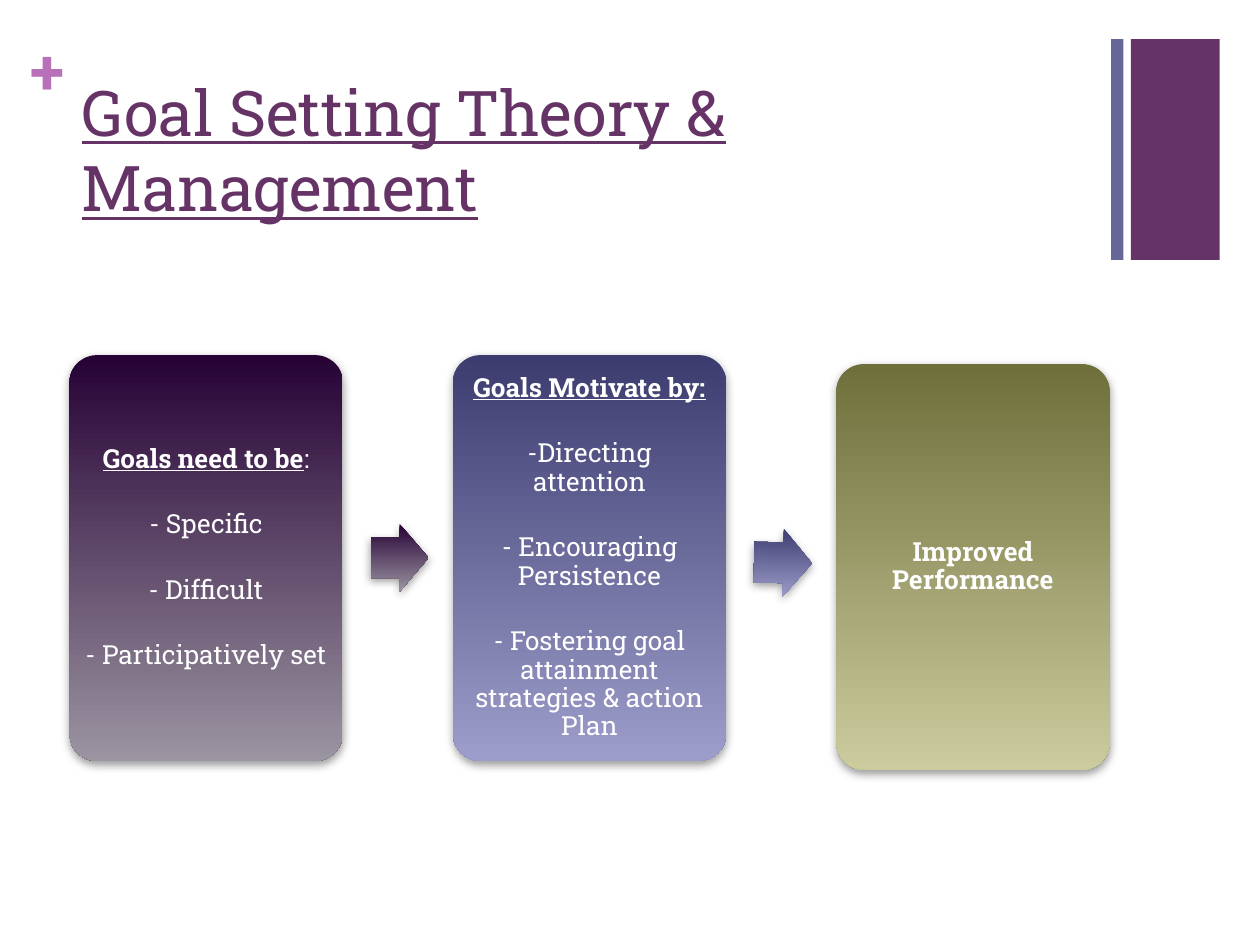
import pptx
import pptx.util
import pptx.dml.color
import pptx.enum.shapes
import pptx.enum.text
import lxml.etree

Cm, Pt = pptx.util.Cm, pptx.util.Pt
SHAPE = pptx.enum.shapes.MSO_SHAPE
ALIGN = pptx.enum.text.PP_ALIGN
ANCHOR = pptx.enum.text.MSO_ANCHOR
FONT = "Roboto Slab"
A = "http://schemas.openxmlformats.org/drawingml/2006/main"

CARD_W, CARD_H = 5.51, 8.18
ARROW_W, ARROW_H = 1.17, 1.37
PARAGRAPH_GAP = 21.3

HEADING = {"bold": True, "underline": True}
PLAIN = {"bold": False, "underline": False}
STRONG = {"bold": True}


def rgb(value):
    return pptx.dml.color.RGBColor.from_string(value)


def add_run(p, text, size, color, formats):
    r = p.add_run()
    r.text = text
    r.font.color.rgb = rgb(color)
    for name, value in {"name": FONT, "size": Pt(size), **formats}.items():
        setattr(r.font, name, value)


def set_frame(tf, anchor, inset_x, inset_y):
    formats = {
        "word_wrap": True,
        "vertical_anchor": anchor,
        "margin_left": Cm(inset_x),
        "margin_right": Cm(inset_x),
        "margin_top": Cm(inset_y),
        "margin_bottom": Cm(inset_y),
    }
    for name, value in formats.items():
        setattr(tf, name, value)


def add_label(s, box, text, color, formats, inset_x=0, inset_y=0):
    tf = s.shapes.add_textbox(*map(Cm, box)).text_frame
    set_frame(tf, ANCHOR.TOP, inset_x, inset_y)
    add_run(tf.paragraphs[0], text, 36, color, formats)


def add_block(s, kind, box):
    sp = s.shapes.add_shape(kind, *map(Cm, box))
    sp.shadow.inherit = False
    sp.line.fill.background()
    return sp


def add_gradient_block(s, kind, box, colors):
    sp = add_block(s, kind, box)
    sp.fill.gradient()
    sp.fill.gradient_angle = 270
    for stop, color, position in zip(sp.fill.gradient_stops, colors, (0, 1)):
        stop.color.rgb = rgb(color)
        stop.position = position
    effects = sp._element.spPr.find(f"{{{A}}}effectLst")
    shadow = lxml.etree.SubElement(
        effects, f"{{{A}}}outerShdw", blurRad=str(Pt(5)), dist=str(Pt(2)),
        dir="5400000", algn="ctr", rotWithShape="0")
    tone = lxml.etree.SubElement(shadow, f"{{{A}}}srgbClr", val="808080")
    lxml.etree.SubElement(tone, f"{{{A}}}alpha", val="75000")
    return sp


def add_header(s, left, top):
    add_label(s, (left, top, 0.74, 1.55), "+", "B870B8", STRONG)
    add_label(s, (left + 0.79, top + 0.71, 20.98, 3.1),
              "Goal Setting Theory & Management", "663366",
              {"underline": True}, 0.25, 0.13)


def add_corner_bars(s, left, top, height):
    for offset, width, color in ((0, 0.25, "666699"), (0.4, 1.79, "663366")):
        sp = add_block(s, SHAPE.RECTANGLE, (left + offset, top, width, height))
        sp.fill.solid()
        sp.fill.fore_color.rgb = rgb(color)


def add_card(s, left, top, colors, paragraphs):
    sp = add_gradient_block(s, SHAPE.ROUNDED_RECTANGLE,
                            (left, top, CARD_W, CARD_H), colors)
    sp.adjustments[0] = 0.1
    tf = sp.text_frame
    set_frame(tf, ANCHOR.MIDDLE, 0.15, 0.15)
    for i, runs in enumerate(paragraphs):
        p = tf.add_paragraph() if i else tf.paragraphs[0]
        formats = {"alignment": ALIGN.CENTER, "line_spacing": 0.9,
                   "space_before": Pt(PARAGRAPH_GAP if i else 0)}
        for name, value in formats.items():
            setattr(p, name, value)
        for text, font_formats in runs:
            add_run(p, text, 15, "FFFFFF", font_formats)


def add_arrow(s, left, top, colors, rotation):
    sp = add_gradient_block(s, SHAPE.RIGHT_ARROW,
                            (left, top, ARROW_W, ARROW_H), colors)
    sp.adjustments[0] = 0.6
    sp.adjustments[1] = 0.5
    sp.rotation = rotation


def add_process(s, left, top):
    plum, indigo, olive = (("260235", "9B94A1"), ("3C3C6F", "9D9DCB"),
                           ("6F6F3C", "CBCB9D"))
    cards = (
        (0, plum, [
            [("Goals need to be", HEADING), (":", PLAIN)],
            [("- Specific", PLAIN)],
            [("- Difficult", PLAIN)],
            [("- Participatively set", PLAIN)],
        ]),
        (0, indigo, [
            [("Goals Motivate by:", HEADING)],
            [("-Directing attention", PLAIN)],
            [("- Encouraging Persistence", PLAIN)],
            [("- Fostering goal attainment strategies & action Plan", PLAIN)],
        ]),
        (0.18, olive, [[("Improved Performance", STRONG)]]),
    )
    pitch = 7.73
    for i, (drop, colors, paragraphs) in enumerate(cards):
        add_card(s, left + i * pitch, top + drop, colors, paragraphs)
    for i, (drop, colors, rotation) in enumerate(((3.4, plum, 0),
                                                  (3.5, indigo, 1.3))):
        add_arrow(s, left + i * pitch + 6.07, top + drop, colors, rotation)


def main():
    prs = pptx.Presentation()
    prs.slide_width, prs.slide_height = Cm(25.4), Cm(19.05)
    s = prs.slides.add_slide(prs.slide_layouts[6])
    add_corner_bars(s, 22.4, 0.79, 4.45)
    add_header(s, 0.61, 0.64)
    add_process(s, 1.4, 7.16)
    prs.save("out.pptx")


if __name__ == "__main__":
    main()
